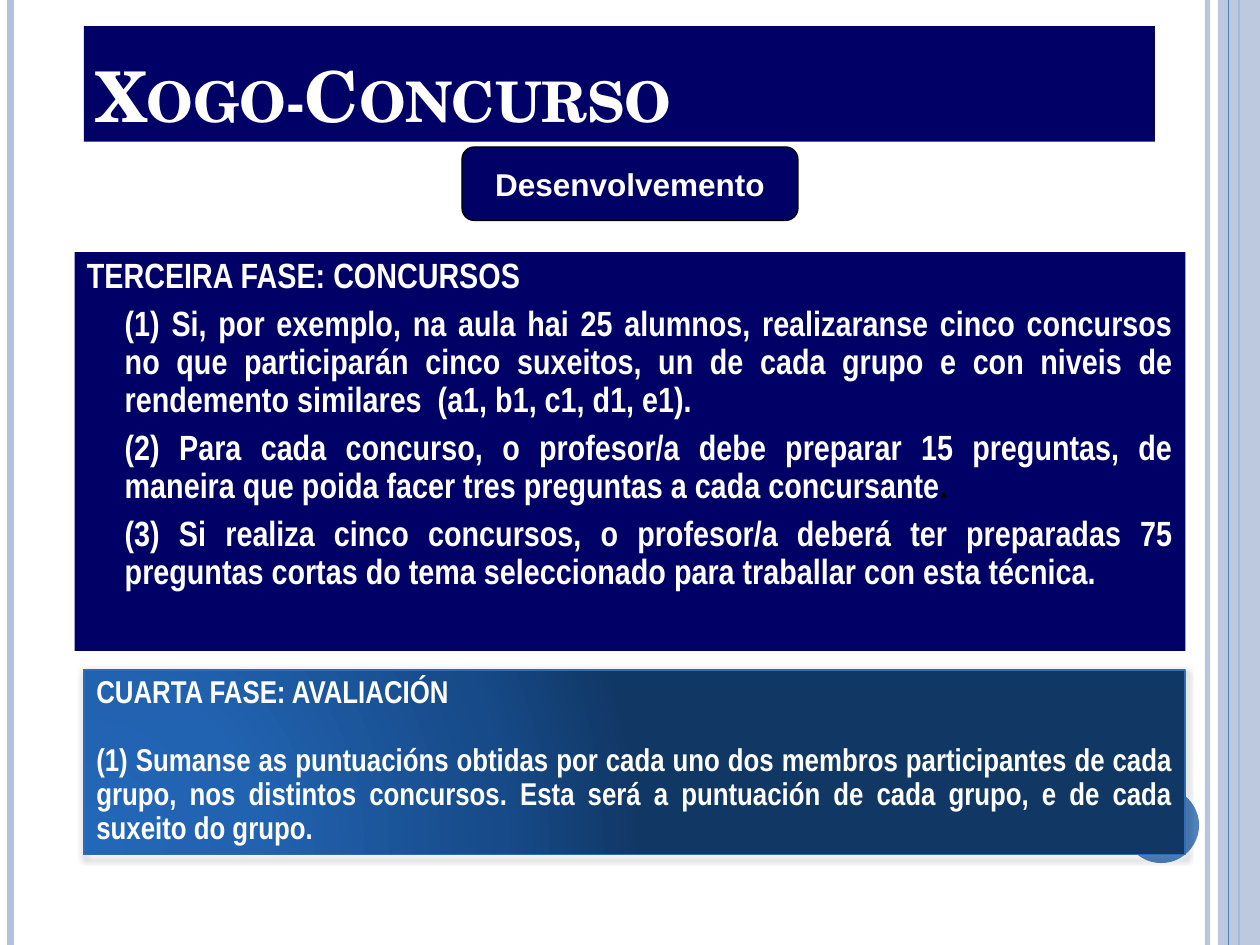
from lxml import etree
from pptx import Presentation
from pptx import util as u
from pptx.dml.color import RGBColor
from pptx.enum import shapes, text
from pptx.oxml import parse_xml
from pptx.oxml.ns import nsdecls, qn

NAVY = RGBColor(0x00, 0x00, 0x66)
WHITE = RGBColor(0xFF, 0xFF, 0xFF)
BLACK = RGBColor(0x00, 0x00, 0x00)
PALE = RGBColor(0xB3, 0xC1, 0xDB)
BLUE = RGBColor(0x4F, 0x81, 0xBD)
EDGE = RGBColor(0x2C, 0x6C, 0xB9)
GLOW = [(0, RGBColor(0x23, 0x67, 0xB8)), (30, RGBColor(0x22, 0x63, 0xB1)),
        (75, RGBColor(0x16, 0x4A, 0x88)), (100, RGBColor(0x11, 0x37, 0x65))]
COLUMNS, ROWS = 120, 90
SHAPE = shapes.MSO_SHAPE
ALIGN = text.PP_ALIGN
ANCHOR = text.MSO_ANCHOR


class ContestSlide:
    """Draws styled elements on one slide laid out on a 120 by 90 grid."""

    def __init__(self, deck):
        self.slide = deck.slides.add_slide(deck.slide_layouts[6])
        self.column = deck.slide_width / COLUMNS
        self.row = deck.slide_height / ROWS

    def place(self, left, top, width, height):
        return (round(left * self.column), round(top * self.row),
                round(width * self.column), round(height * self.row))

    def fade(self, owner, percent):
        color = owner.find(".//" + qn("a:srgbClr"))
        etree.SubElement(color, qn("a:alpha"), val=str(percent * 1000))

    def rule(self, column, color, width, opacity=100):
        x, top, _, bottom = self.place(column, 0, 0, ROWS)
        stripe = self.slide.shapes.add_connector(shapes.MSO_CONNECTOR.STRAIGHT, x, top, x, bottom)
        stripe.line.color.rgb = color
        stripe.line.width = u.Pt(width)
        props = stripe._element.spPr
        if opacity < 100:
            self.fade(props, opacity)
        etree.SubElement(props, qn("a:effectLst"))

    def panel(self, kind, box, fill=None, edge=None, width=0.75, opacity=100):
        panel = self.slide.shapes.add_shape(kind, *self.place(*box))
        panel.shadow.inherit = False
        if fill is not None:
            panel.fill.solid()
            panel.fill.fore_color.rgb = fill
        if opacity < 100:
            self.fade(panel._element.spPr, opacity)
        if edge is None:
            panel.line.fill.background()
        else:
            panel.line.color.rgb = edge
            panel.line.width = u.Pt(width)
        return panel

    def glow(self, panel):
        stops = "".join(f'<a:gs pos="{at * 1000}"><a:srgbClr val="{color}"/></a:gs>'
                        for at, color in GLOW)
        gradient = parse_xml(
            f'<a:gradFill {nsdecls("a")} rotWithShape="1"><a:gsLst>{stops}</a:gsLst>'
            '<a:path path="circle"><a:fillToRect l="5000" t="100000" r="120000" b="10000"/>'
            '</a:path></a:gradFill>')
        props = panel._element.spPr
        props.find(qn("a:prstGeom")).addnext(gradient)
        props.find(qn("a:effectLst")).append(parse_xml(
            f'<a:outerShdw {nsdecls("a")} blurRad="{u.Pt(4)}" dist="{u.Pt(1.6)}" dir="5400000" '
            f'rotWithShape="0"><a:srgbClr val="{BLACK}"><a:alpha val="42000"/></a:srgbClr>'
            '</a:outerShdw>'))

    def label(self, panel, paragraphs, font, size, anchor=ANCHOR.TOP, wrap=True, **style):
        frame = panel.text_frame
        frame.word_wrap = wrap
        frame.vertical_anchor = anchor
        for index, (runs, own) in enumerate(paragraphs):
            paragraph = frame.paragraphs[0] if index == 0 else frame.add_paragraph()
            layout = {"alignment": ALIGN.JUSTIFY, **style, **own}
            margin = layout.pop("margin", None)
            if margin:
                paragraph._p.get_or_add_pPr().set("marL", str(round(margin * self.column)))
            for name, value in layout.items():
                setattr(paragraph, name, value)
            for words, color in runs:
                run = paragraph.add_run()
                run.text = words
                run.font.color.rgb = color
                for name, value in {"name": font, "size": u.Pt(size), "bold": True}.items():
                    setattr(run.font, name, value)


def main():
    deck = Presentation()
    deck.slide_width, deck.slide_height = u.Inches(10), u.Inches(7.5)
    page = ContestSlide(deck)

    page.rule(115, PALE, 3, 93)
    page.rule(1, PALE, 4.5)
    page.rule(118, BLUE, 1.5)
    page.panel(SHAPE.RECTANGLE, (116, 0, 4, ROWS), PALE, opacity=87)
    page.rule(117, BLUE, 0.75)
    page.panel(SHAPE.OVAL, (107, 75, 7.2, 7.2), BLUE)

    third_phase = page.panel(SHAPE.RECTANGLE, (7.1, 24, 105.8, 38), NAVY)
    step = {"margin": 3.6}
    page.label(third_phase, [
        ([("TERCEIRA FASE: CONCURSOS", WHITE)], {}),
        ([("(1) Si, por exemplo, na aula hai 25 alumnos, realizaranse cinco concursos no que "
           "participarán cinco suxeitos, un de cada grupo e con niveis de rendemento similares  "
           "(a1, b1, c1, d1, e1).", WHITE)], step),
        ([("(2) Para cada concurso, o profesor/a debe preparar 15 preguntas, de maneira que "
           "poida facer tres preguntas a cada concursante", WHITE), (".", BLACK)], step),
        ([("(3) Si realiza cinco concursos, o profesor/a deberá ter preparadas 75 preguntas "
           "cortas do tema seleccionado para traballar con esta técnica.", WHITE)], step),
    ], "Arial Narrow", 20, line_spacing=0.9, space_before=u.Pt(6))

    development = page.panel(SHAPE.ROUNDED_RECTANGLE, (44, 14, 32, 7), NAVY, BLACK)
    page.label(development, [([("Desenvolvemento", WHITE)], {})], "Arial", 18,
               ANCHOR.MIDDLE, False, alignment=ALIGN.CENTER)

    title = page.panel(SHAPE.RECTANGLE, (8, 2.5, 102, 11), NAVY)
    page.label(title, [([("Xogo-Concurso", WHITE)], {})], "TeX Gyre Schola", 40,
               ANCHOR.BOTTOM, alignment=ALIGN.LEFT, line_spacing=0.8)
    title.text_frame.paragraphs[0].runs[0]._r.get_or_add_rPr().set("cap", "small")

    fourth_phase = page.panel(SHAPE.RECTANGLE, (8, 63.8, 104.9, 17.6), edge=EDGE, width=1)
    page.glow(fourth_phase)
    page.label(fourth_phase, [
        ([("CUARTA FASE: AVALIACIÓN", WHITE)], {}),
        ([("(1) Sumanse as puntuacións obtidas por cada uno dos membros participantes de cada "
           "grupo, nos distintos concursos. Esta será a puntuación de cada grupo, e de cada "
           "suxeito do grupo.", WHITE)], {"space_before": u.Pt(19.5)}),
    ], "Arial Narrow", 18, line_spacing=0.9)

    deck.save("out.pptx")


if __name__ == "__main__":
    main()
